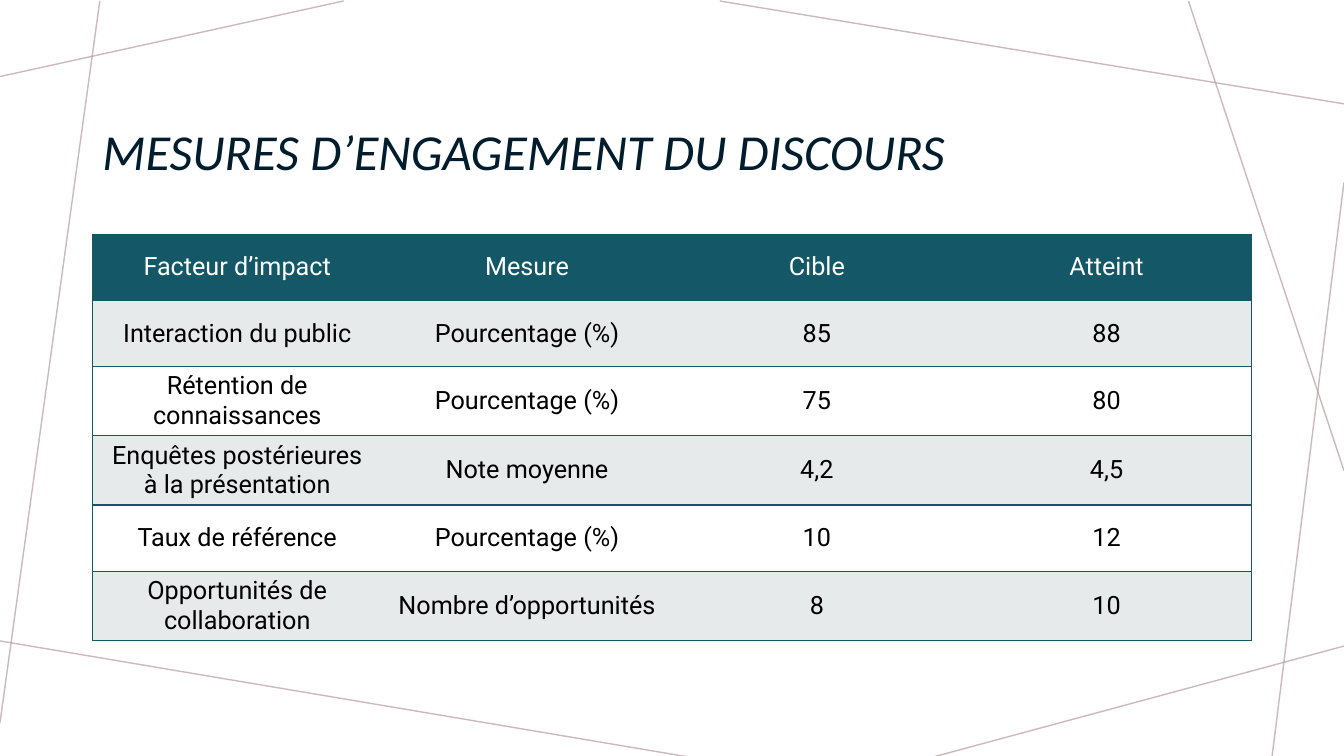
"""Build a slide with a table of speech engagement measures."""
from dataclasses import dataclass

from lxml import etree
from pptx import Presentation
from pptx.dml.color import RGBColor
from pptx.enum.shapes import MSO_CONNECTOR
from pptx.enum.text import MSO_ANCHOR, PP_ALIGN
from pptx.oxml import parse_xml
from pptx.oxml.ns import nsdecls, qn
from pptx.util import Pt

LINE = MSO_CONNECTOR.STRAIGHT
MIDDLE, BOTTOM = MSO_ANCHOR.MIDDLE, MSO_ANCHOR.BOTTOM
LEFT, CENTER = PP_ALIGN.LEFT, PP_ALIGN.CENTER


@dataclass(frozen=True)
class Theme:
    """Colours, fonts and sizes of the slide."""
    paper: str = "FFFFFF"
    navy: str = "001D2E"
    teal: str = "145766"
    band: str = "E7EAEA"
    ink: str = "000000"
    mauve: str = "B99B9F"
    alpha: int = 70
    head: str = "Calibri"
    body: str = "Roboto"
    big: int = 36
    small: int = 18
    rule: int = 1


class Deck:
    """Draw styled elements on the current slide."""

    def __init__(self, file, theme):
        self.theme = theme
        self.slide = file.slides.add_slide(file.slide_layouts[5])
        back = self.slide.background.fill
        back.solid()
        back.fore_color.rgb = RGBColor.from_string(theme.paper)

    def text(self, frame, words, font, size, color, align, italic=False):
        """Add one styled run to the first paragraph."""
        para = frame.paragraphs[0]
        para.alignment = align
        run = para.add_run()
        run.text = words
        run.font.name = font
        run.font.size = Pt(size)
        run.font.bold = False
        run.font.italic = italic
        run.font.color.rgb = RGBColor.from_string(color)
        return para

    def title(self, words, x, y, w, h):
        """Place and fill the title placeholder."""
        box = self.slide.shapes.title
        box.left, box.top, box.width, box.height = map(Pt, (x, y, w, h))
        frame = box.text_frame
        frame.word_wrap = True
        frame.vertical_anchor = BOTTOM
        para = self.text(frame, words, self.theme.head, self.theme.big,
                         self.theme.navy, LEFT, True)
        para.line_spacing = 0.9

    def line(self, *ends):
        """Draw one thin translucent line."""
        link = self.slide.shapes.add_connector(LINE, *map(Pt, ends))
        link.line.width = Pt(self.theme.rule)
        link.line.color.rgb = RGBColor.from_string(self.theme.mauve)
        props = link._element.spPr
        tint = props.find(".//" + qn("a:srgbClr"))
        etree.SubElement(tint, qn("a:alpha"), val=str(self.theme.alpha * 1000))
        etree.SubElement(props, qn("a:effectLst"))

    def edges(self, cell, first, last):
        """Rule a cell above and below, and at the table sides."""
        props = cell._tc.get_or_add_tcPr()
        solid = f'<a:solidFill><a:srgbClr val="{self.theme.teal}"/></a:solidFill>'
        sides = {"L": first, "R": last, "T": True, "B": True}
        for place, (side, shown) in enumerate(sides.items()):
            paint = solid if shown else "<a:noFill/>"
            props.insert(place, parse_xml(
                f'<a:ln{side} {nsdecls("a")} w="{Pt(self.theme.rule)}">'
                f'{paint}</a:ln{side}>'))

    def table(self, rows, x, y, w, h):
        """Draw a table with a header and banded rows."""
        wide = len(rows[0])
        grid = self.slide.shapes.add_table(
            len(rows), wide, *map(Pt, (x, y, w, h))).table
        grid.first_row = grid.horz_banding = False
        for r, row in enumerate(rows):
            fill = self.theme.band if r % 2 else self.theme.paper
            color = self.theme.ink
            if r == 0:
                fill, color = self.theme.teal, self.theme.paper
            for c, words in enumerate(row):
                cell = grid.cell(r, c)
                cell.vertical_anchor = MIDDLE
                cell.fill.solid()
                cell.fill.fore_color.rgb = RGBColor.from_string(fill)
                self.edges(cell, c == 0, c == wide - 1)
                self.text(cell.text_frame, words, self.theme.body,
                          self.theme.small, color, CENTER)


LINES = [
    (245.5, 0.7, 0, 54.7),
    (71.3, 0.7, 0, 516.2),
    (491.8, 540.7, -3.6, 457.2),
    (960, 461.5, 666.7, 540.7),
    (960, 130.3, 908.6, 540.7),
    (960, 336.2, 848.9, 0.7),
    (960, 74.2, 514.1, 0.7),
]
ROWS = [
    ("Facteur d’impact", "Mesure", "Cible", "Atteint"),
    ("Interaction du public", "Pourcentage (%)", "85", "88"),
    ("Rétention de connaissances", "Pourcentage (%)", "75", "80"),
    ("Enquêtes postérieures à la présentation", "Note moyenne", "4,2", "4,5"),
    ("Taux de référence", "Pourcentage (%)", "10", "12"),
    ("Opportunités de collaboration", "Nombre d’opportunités", "8", "10"),
]


def main():
    """Build and save the slide."""
    file = Presentation()
    file.slide_width, file.slide_height = Pt(960), Pt(540)
    deck = Deck(file, Theme())
    for ends in LINES:
        deck.line(*ends)
    deck.title("MESURES D’ENGAGEMENT DU DISCOURS", 66, 28.8, 828, 104.4)
    deck.table(ROWS, 66, 167.4, 828, 283.2)
    file.save("out.pptx")


if __name__ == "__main__":
    main()
